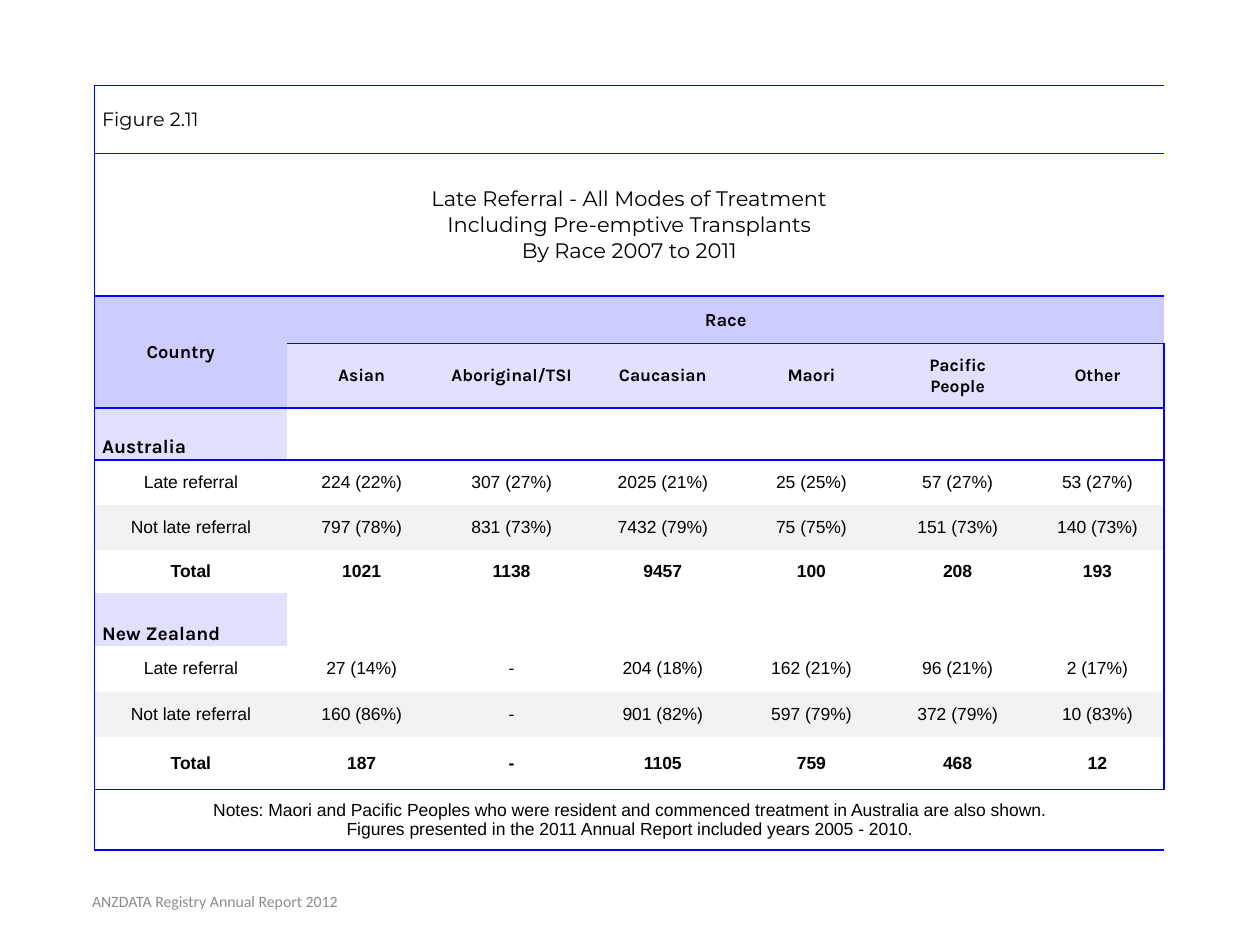
from lxml import etree
from pptx import Presentation
from pptx.dml.color import RGBColor as RGB
from pptx.enum.text import MSO_ANCHOR as ANCHOR, PP_ALIGN as ALIGN
from pptx.oxml.ns import qn
from pptx.util import Inches, Pt

COLORS = dict(rule="0000FF", header="CCCCFF", subheader="E1E1FF",
              band="F2F2F2", text="000000", footer="8C8C8C")
NO_STYLE = "{2D5ABB26-0587-4C30-8999-92F81FD0307C}"
COL_WIDTHS = [1.53, 1.18, 1.2, 1.2, 1.16, 1.16, 1.06]
ROW_HEIGHTS = [0.54, 1.13, 0.38, 0.51, 0.41, 0.36, 0.36, 0.34,
               0.42, 0.36, 0.36, 0.42, 0.48]
RACES = ["Asian", "Aboriginal/TSI", "Caucasian", "Maori", "Pacific\nPeople", "Other"]
COUNTRIES = {
    "Australia": [
        ["Late referral", "224 (22%)", "307 (27%)", "2025 (21%)",
         "25 (25%)", "57 (27%)", "53 (27%)"],
        ["Not late referral", "797 (78%)", "831 (73%)", "7432 (79%)",
         "75 (75%)", "151 (73%)", "140 (73%)"],
        ["Total", "1021", "1138", "9457", "100", "208", "193"],
    ],
    "New Zealand": [
        ["Late referral", "27 (14%)", "-", "204 (18%)",
         "162 (21%)", "96 (21%)", "2 (17%)"],
        ["Not late referral", "160 (86%)", "-", "901 (82%)",
         "597 (79%)", "372 (79%)", "10 (83%)"],
        ["Total", "187", "-", "1105", "759", "468", "12"],
    ],
}
TITLE = ("Late Referral - All Modes of Treatment\n"
         "Including Pre-emptive Transplants\nBy Race 2007 to 2011")
NOTES = ("Notes: Maori and Pacific Peoples who were resident and commenced "
         "treatment in Australia are also shown.\n"
         "Figures presented in the 2011 Annual Report included years 2005 - 2010.")


def write(tf, text, font, size, bold=False, align=ALIGN.CENTER, color="text"):
    tf.text = text
    for p in tf.paragraphs:
        p.alignment = align
        for r in p.runs:
            for name, value in dict(name=font, size=Pt(size), bold=bold).items():
                setattr(r.font, name, value)
            r.font.color.rgb = RGB.from_string(COLORS[color])


def fill_cells(cells, color):
    for cell in cells:
        cell.fill.solid()
        cell.fill.fore_color.rgb = RGB.from_string(COLORS[color])


def set_borders(cell, **widths):
    """Draw the sides named L, R, T and B with the given widths in points."""
    tc_pr = cell._tc.get_or_add_tcPr()
    sides = [side for side in "LRTB" if side in widths]
    for i, side in enumerate(sides):
        ln = etree.Element(qn(f"a:ln{side}"), w=str(Pt(widths[side])))
        fill = etree.SubElement(ln, qn("a:solidFill"))
        etree.SubElement(fill, qn("a:srgbClr"), val=COLORS["rule"])
        tc_pr.insert(i, ln)


def rule_table(grid):
    """Frame the table and rule off its title, header and notes rows."""
    last_row, last_col = len(grid) - 1, len(grid[0]) - 1
    ruled_tops = {0, 1, 2, 4, last_row}
    for i, row in enumerate(grid):
        for j, cell in enumerate(row):
            sides = {}
            if j == 0:
                sides["L"] = 1
            if j == last_col:
                sides["R"] = 1
            if i in ruled_tops:
                sides["T"] = 1
            if i == last_row or i + 1 in ruled_tops:
                sides["B"] = 1
            if j > 0 and i in (2, 3):
                sides["B" if i == 2 else "T"] = 0.75
            set_borders(cell, **sides)


def add_headings(grid):
    for row, text, size, align in ((0, "Figure 2.11", 11, ALIGN.LEFT),
                                   (1, TITLE, 12, ALIGN.CENTER)):
        grid[row][0].merge(grid[row][-1])
        write(grid[row][0].text_frame, text, "Montserrat", size, align=align)
    grid[0][0].margin_left = Inches(0.06)

    country, race = grid[2][0], grid[2][1]
    country.merge(grid[3][0])
    country.margin_right = Inches(0.18)
    race.merge(grid[2][-1])
    write(country.text_frame, "Country", "Karla", 10.5, True)
    write(race.text_frame, "Race", "Karla", 10.5, True)
    fill_cells(grid[2] + grid[3][:1], "header")
    fill_cells(grid[3][1:], "subheader")
    for cell, name in zip(grid[3][1:], RACES):
        write(cell.text_frame, name, "Karla", 10, True)


def add_country(rows, name, records):
    head = rows[0][0]
    head.vertical_anchor = ANCHOR.BOTTOM
    head.margin_left = Inches(0.06)
    write(head.text_frame, name, "Karla", 11, True, ALIGN.LEFT)
    fill_cells([head], "subheader")
    for row, record in zip(rows[1:], records):
        for cell, text in zip(row, record):
            write(cell.text_frame, text, "Arial", 10, record[0] == "Total")
    fill_cells(rows[2], "band")


def add_referral_table(s, x, y, w, h):
    frame = s.shapes.add_table(len(ROW_HEIGHTS), len(COL_WIDTHS),
                               Inches(x), Inches(y), Inches(w), Inches(h))
    table = frame.table
    table.first_row = table.horz_banding = False
    table._tbl.tblPr.find(qn("a:tableStyleId")).text = NO_STYLE
    for col, width in zip(table.columns, COL_WIDTHS):
        col.width = Inches(width)
    for row, height in zip(table.rows, ROW_HEIGHTS):
        row.height = Inches(height)

    grid = [list(row.cells) for row in table.rows]
    for cell in table.iter_cells():
        cell.margin_left = cell.margin_right = Inches(0.02)
        cell.margin_top = cell.margin_bottom = Inches(0.01)
        cell.vertical_anchor = ANCHOR.MIDDLE
        cell.fill.background()

    add_headings(grid)
    for i, (name, records) in enumerate(COUNTRIES.items()):
        start = 4 + 4 * i
        add_country(grid[start:start + 4], name, records)
    grid[-1][0].merge(grid[-1][-1])
    write(grid[-1][0].text_frame, NOTES, "Arial", 10)
    rule_table(grid)


def add_footer(s, x, y, w, h):
    tf = s.shapes.add_textbox(Inches(x), Inches(y), Inches(w), Inches(h)).text_frame
    tf.word_wrap = True
    tf.vertical_anchor = ANCHOR.MIDDLE
    write(tf, "ANZDATA Registry Annual Report 2012", "Calibri", 9, color="footer")


def main():
    prs = Presentation()
    prs.slide_width, prs.slide_height = Inches(10), Inches(7.5)
    s = prs.slides.add_slide(prs.slide_layouts[6])
    add_referral_table(s, 0.75, 0.68, 8.5, 6.06)
    add_footer(s, 0.12, 6.95, 3.17, 0.4)
    prs.save("out.pptx")


if __name__ == "__main__":
    main()
